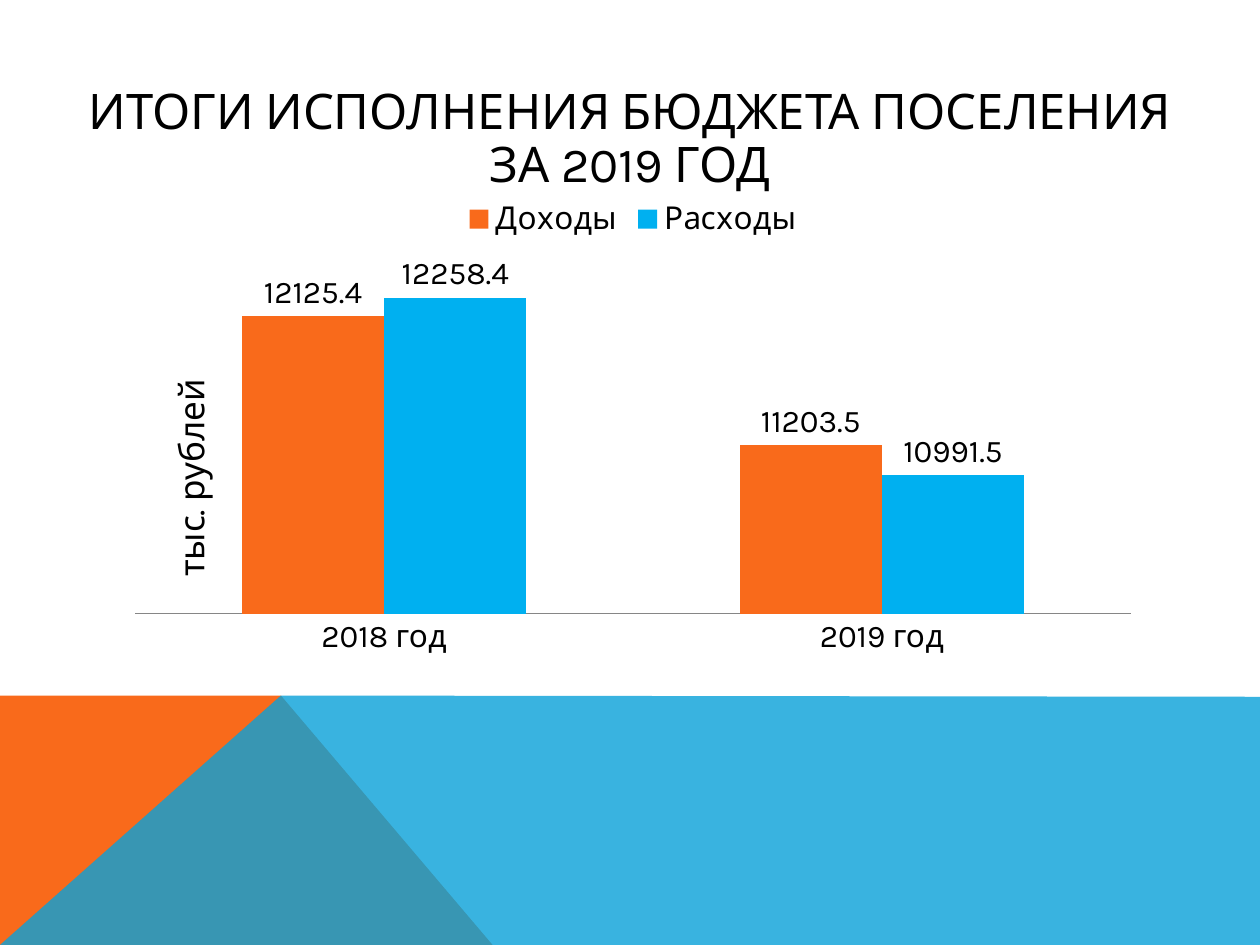
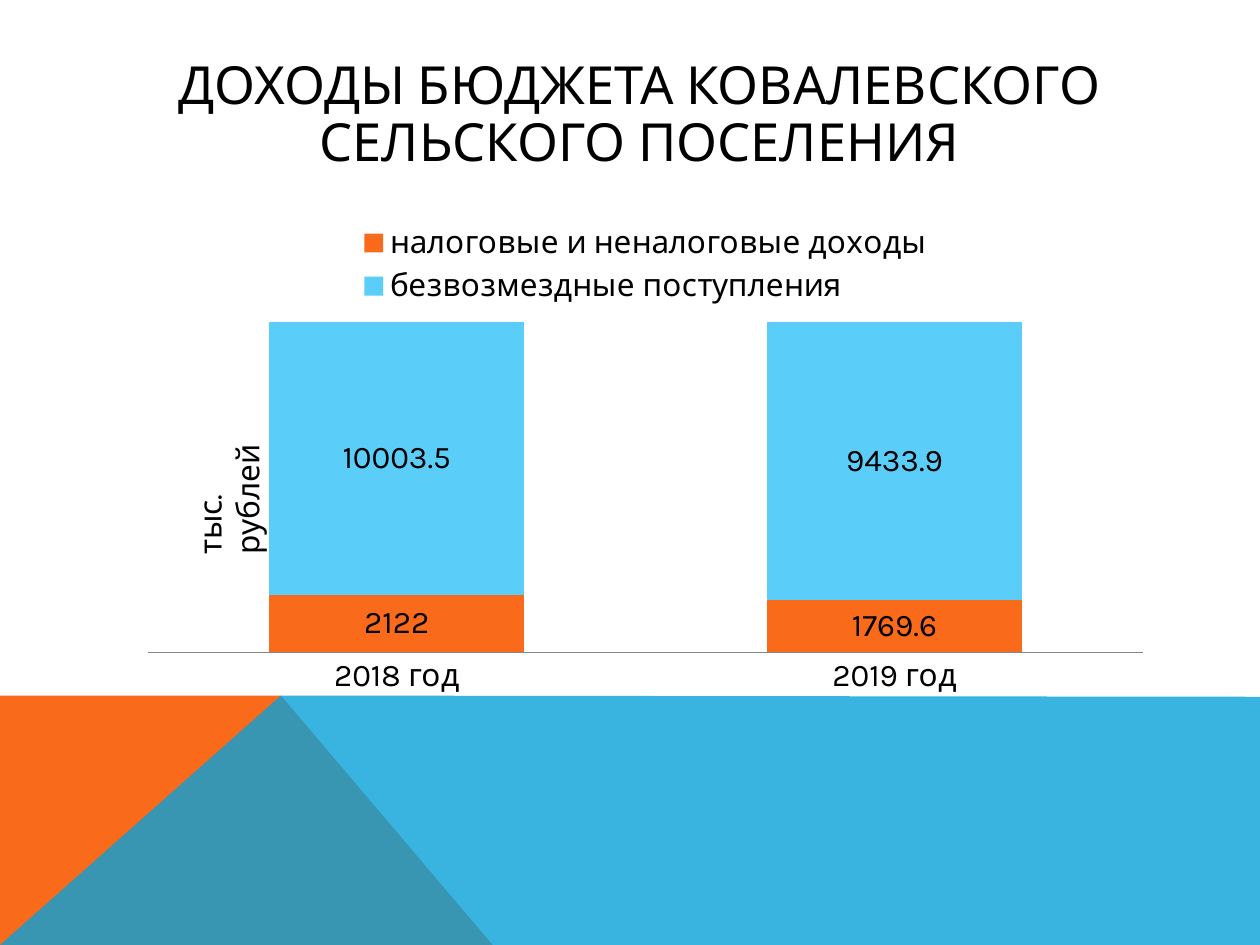
import pptx
import pptx.chart.data
import pptx.dml.color
import pptx.enum.chart
import pptx.enum.text
import pptx.oxml
import pptx.oxml.ns
import pptx.util
from lxml import etree

Inches = pptx.util.Inches
Pt = pptx.util.Pt
ChartType = pptx.enum.chart.XL_CHART_TYPE
LabelPosition = pptx.enum.chart.XL_LABEL_POSITION
qn = pptx.oxml.ns.qn

FONT = "Karla"
BLACK, ORANGE, BLUE, GREY = "000000", "F96A1B", "08A1D9", "868686"
YEARS = ["2018 год", "2019 год"]


def color(hex_string):
    return pptx.dml.color.RGBColor.from_string(hex_string)


def add_span(para, text, size):
    span = para.add_run()
    span.text = text
    span.font.name = FONT
    span.font.size = Pt(size)
    span.font.color.rgb = color(BLACK)


# What each page shows; boxes are left, top, width, height
pages = [
    dict(
        title="ИТОГИ ИСПОЛНЕНИЯ БЮДЖЕТА ПОСЕЛЕНИЯ ЗА 2019 ГОД",
        title_box=(0.51, 0.36, 8.98, 1.5), title_size=28,
        chart_type=ChartType.COLUMN_CLUSTERED, chart_box=(0.91, 1.47, 8.23, 3.91),
        plot_area=(0.02, 0.16, 0.96, 0.71), gap=150, overlap=0,
        axis_range=(10000, 12500), labels_at=LabelPosition.OUTSIDE_END,
        series=[("Доходы", (12125.4, 11203.5), ORANGE),
                ("Расходы", (12258.4, 10991.5), "00B0F0")],
        unit_box=(0.53, 3.47, 1.97, 0.44), unit_size=20),
    dict(
        title="ДОХОДЫ БЮДЖЕТА КОВАЛЕВСКОГО СЕЛЬСКОГО ПОСЕЛЕНИЯ",
        title_box=(0.51, 0.29, 9.13, 1.26), title_size=30,
        chart_type=ChartType.COLUMN_STACKED_100, chart_box=(1.01, 1.66, 8.23, 3.91),
        plot_area=(0.02, 0.23, 0.96, 0.67), gap=95, overlap=100,
        axis_range=(0, 1), labels_at=LabelPosition.CENTER,
        series=[("налоговые и неналоговые доходы", (2122, 1769.6), ORANGE),
                ("безвозмездные поступления", (10003.5, 9433.9), "5ACEF9")],
        unit_box=(0.93, 3.57, 1.46, 0.4), unit_size=18),
]

deck = pptx.Presentation()
deck.slide_width, deck.slide_height = Inches(10), Inches(7.5)
layout = deck.slide_layouts[5]
slides = [deck.slides.add_slide(layout) for content in pages]

# Shared bottom bands, moved to the layout
bands = [
    ([(0, 7.5), (0, 5.52), (2.23, 5.52), (3.91, 7.5)], ORANGE, 100),
    ([(0, 7.5), (2.23, 5.52), (10, 5.53), (10, 7.5)], BLUE, 80),
]
for corners, fill, opacity in bands:
    points = [(Inches(x), Inches(y)) for x, y in corners]
    builder = slides[0].shapes.build_freeform(*points[0])
    builder.add_line_segments(points[1:], close=True)
    band = builder.convert_to_shape()
    band.shadow.inherit = False
    band.line.fill.background()
    band.fill.solid()
    band.fill.fore_color.rgb = color(fill)
    if opacity < 100:
        fill_color = band.element.spPr.find(".//" + qn("a:srgbClr"))
        etree.SubElement(fill_color, qn("a:alpha"), val=str(opacity * 1000))
    layout.shapes.element.append(band.element)

for page, content in zip(slides, pages):
    # Title
    title = page.shapes.title
    title.left, title.top, title.width, title.height = map(Inches, content["title_box"])
    title.text_frame.vertical_anchor = pptx.enum.text.MSO_ANCHOR.MIDDLE
    para = title.text_frame.paragraphs[0]
    para.alignment = pptx.enum.text.PP_ALIGN.CENTER
    para.line_spacing = 0.9
    add_span(para, content["title"], content["title_size"])

    # Chart
    data = pptx.chart.data.CategoryChartData()
    data.categories = YEARS
    for name, values, fill in content["series"]:
        data.add_series(name, values)
    chart = page.shapes.add_chart(
        content["chart_type"], *map(Inches, content["chart_box"]), data).chart
    chart.has_title = False
    chart.font.name = FONT
    chart.font.size = Pt(18)
    chart.font.color.rgb = color(BLACK)
    chart.has_legend = True
    chart.legend.position = pptx.enum.chart.XL_LEGEND_POSITION.TOP
    chart.legend.include_in_layout = False

    # Columns and their labels
    plot = chart.plots[0]
    plot.vary_by_categories = False
    plot.gap_width = content["gap"]
    plot.overlap = content["overlap"]
    plot.has_data_labels = True
    plot.data_labels.show_value = True
    plot.data_labels.position = content["labels_at"]
    for series, (name, values, fill) in zip(plot.series, content["series"]):
        series.format.fill.solid()
        series.format.fill.fore_color.rgb = color(fill)

    # Axes
    chart.value_axis.visible = False
    chart.value_axis.has_major_gridlines = False
    chart.value_axis.minimum_scale, chart.value_axis.maximum_scale = content["axis_range"]
    chart.category_axis.major_tick_mark = pptx.enum.chart.XL_TICK_MARK.NONE
    chart.category_axis.format.line.color.rgb = color(GREY)

    # Fixed inner plot area
    plot_area = chart.element.find(".//" + qn("c:plotArea"))
    for automatic in plot_area.findall(qn("c:layout")):
        plot_area.remove(automatic)
    placing = etree.Element(qn("c:layout"))
    manual = etree.SubElement(placing, qn("c:manualLayout"))
    settings = [("layoutTarget", "inner"), ("xMode", "edge"), ("yMode", "edge")]
    settings += zip("xywh", content["plot_area"])
    for tag, value in settings:
        etree.SubElement(manual, qn("c:" + tag), val=str(value))
    plot_area.insert(0, placing)

    # Unit of measure beside the columns
    unit = page.shapes.add_textbox(*map(Inches, content["unit_box"]))
    unit.rotation = 270
    unit.text_frame.word_wrap = True
    unit.text_frame.auto_size = pptx.enum.text.MSO_AUTO_SIZE.SHAPE_TO_FIT_TEXT
    add_span(unit.text_frame.paragraphs[0], "тыс. рублей", content["unit_size"])

deck.save("out.pptx")
